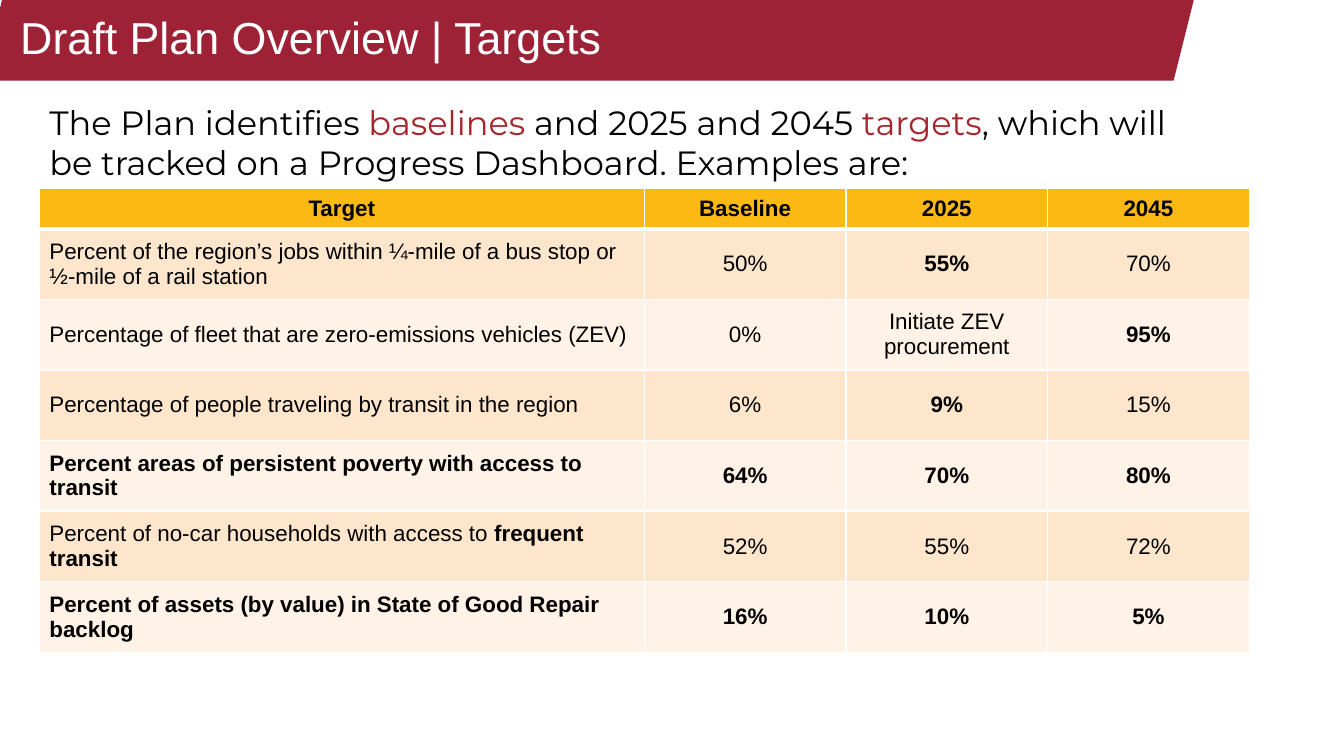
"""Build the Draft Plan Overview targets slide."""
from dataclasses import dataclass

import lxml.etree
import pptx
import pptx.dml.color
import pptx.enum.shapes
import pptx.enum.text
import pptx.oxml.ns
import pptx.slide
import pptx.table
import pptx.text.text
import pptx.util

PX = 9144
ALIGN = pptx.enum.text.PP_ALIGN
MIDDLE = pptx.enum.text.MSO_ANCHOR.MIDDLE


@dataclass(frozen=True)
class Theme:
    banner: str = "9D2236"
    accent: str = "A5272C"
    header: str = "FDB913"
    bands: tuple[str, str] = ("FEE6CC", "FFF3E7")
    white: str = "FFFFFF"
    black: str = "000000"
    font: str = "Arial"
    lead: str = "Montserrat"
    title: int = 32
    intro: int = 24
    cell: int = 16


@dataclass(frozen=True)
class Span:
    text: str
    bold: bool = False
    color: str = Theme.black


@dataclass(frozen=True)
class Row:
    label: tuple[Span, ...]
    values: tuple[Span, ...]


THEME = Theme()
INTRO = (
    Span("The Plan identifies "),
    Span("baselines", color=THEME.accent),
    Span(" and 2025 and 2045 "),
    Span("targets", color=THEME.accent),
    Span(", which will be tracked on a Progress Dashboard. Examples are:"),
)
HEAD = Row((Span("Target", True),),
           (Span("Baseline", True), Span("2025", True), Span("2045", True)))
ROWS = (
    Row((Span("Percent of the region’s jobs within ¼-mile of a bus stop or ½-mile of a rail station"),),
        (Span("50%"), Span("55%", True), Span("70%"))),
    Row((Span("Percentage of fleet that are zero-emissions vehicles (ZEV)"),),
        (Span("0%"), Span("Initiate ZEV procurement"), Span("95%", True))),
    Row((Span("Percentage of people traveling by transit in the region"),),
        (Span("6%"), Span("9%", True), Span("15%"))),
    Row((Span("Percent areas of persistent poverty with access to transit", True),),
        (Span("64%", True), Span("70%", True), Span("80%", True))),
    Row((Span("Percent of no-car households with access to "), Span("frequent transit", True)),
        (Span("52%"), Span("55%"), Span("72%"))),
    Row((Span("Percent of assets (by value) in State of Good Repair backlog", True),),
        (Span("16%", True), Span("10%", True), Span("5%", True))),
)
WIDTHS = (600, 200, 200, 200)
TOP, BODY = 40, 70


def px(*sizes: int) -> list[pptx.util.Emu]:
    return [pptx.util.Emu(size * PX) for size in sizes]


def rgb(color: str) -> pptx.dml.color.RGBColor:
    return pptx.dml.color.RGBColor.from_string(color)


def write(para: pptx.text.text._Paragraph, spans: tuple[Span, ...], font: str, size: int) -> None:
    for span in spans:
        run = para.add_run()
        run.text = span.text
        run.font.name = font
        run.font.size = pptx.util.Pt(size)
        run.font.bold = span.bold
        run.font.color.rgb = rgb(span.color)


def border(cell: pptx.table._Cell, side: str, points: int) -> None:
    qn = pptx.oxml.ns.qn
    props = cell._tc.get_or_add_tcPr()
    line = lxml.etree.SubElement(props, qn(f"a:ln{side}"), w=str(pptx.util.Pt(points)))
    fill = lxml.etree.SubElement(line, qn("a:solidFill"))
    lxml.etree.SubElement(fill, qn("a:srgbClr"), val=THEME.white)


def banner(slide: pptx.slide.Slide) -> None:
    kind = pptx.enum.shapes.MSO_SHAPE.PARALLELOGRAM
    shape = slide.shapes.add_shape(kind, *px(-18, 0, 1202, 80))
    shape.shadow.inherit = False
    shape.fill.solid()
    shape.fill.fore_color.rgb = rgb(THEME.banner)
    shape.line.fill.background()
    slide.shapes._spTree.insert(2, shape._element)


def title(slide: pptx.slide.Slide) -> None:
    shape = slide.shapes.title
    shape.left, shape.top, shape.width, shape.height = px(10, 0, 1152, 80)
    frame = shape.text_frame
    frame.auto_size = pptx.enum.text.MSO_AUTO_SIZE.NONE
    frame.vertical_anchor = MIDDLE
    para = frame.paragraphs[0]
    para.alignment = ALIGN.LEFT
    para.line_spacing = 0.9
    write(para, (Span("Draft Plan Overview | Targets", color=THEME.white),), THEME.font, THEME.title)


def intro(slide: pptx.slide.Slide) -> None:
    frame = slide.shapes.add_textbox(*px(39, 96, 1175, 91)).text_frame
    frame.word_wrap = True
    frame.auto_size = pptx.enum.text.MSO_AUTO_SIZE.SHAPE_TO_FIT_TEXT
    write(frame.paragraphs[0], INTRO, THEME.lead, THEME.intro)


def table(slide: pptx.slide.Slide) -> None:
    rows = (HEAD, *ROWS)
    place = px(39, 187, sum(WIDTHS), TOP + BODY * len(ROWS))
    grid = slide.shapes.add_table(len(rows), len(WIDTHS), *place).table
    for col, width in zip(grid.columns, px(*WIDTHS)):
        col.width = width
    for r, row in enumerate(rows):
        grid.rows[r].height = px(BODY if r else TOP)[0]
        color = THEME.bands[(r - 1) % 2] if r else THEME.header
        for c, spans in enumerate((row.label, *((value,) for value in row.values))):
            cell = grid.cell(r, c)
            for side, points in zip("LRTB", (1, 1, 3 if r == 1 else 1, 1 if r else 3)):
                border(cell, side, points)
            cell.fill.solid()
            cell.fill.fore_color.rgb = rgb(color)
            cell.vertical_anchor = MIDDLE
            para = cell.text_frame.paragraphs[0]
            para.alignment = ALIGN.LEFT if r and not c else ALIGN.CENTER
            write(para, spans, THEME.font, THEME.cell)


def main() -> None:
    deck = pptx.Presentation()
    deck.slide_width, deck.slide_height = px(1333, 750)
    slide = deck.slides.add_slide(deck.slide_layouts[5])
    banner(slide)
    intro(slide)
    title(slide)
    table(slide)
    deck.save("out.pptx")


if __name__ == "__main__":
    main()
